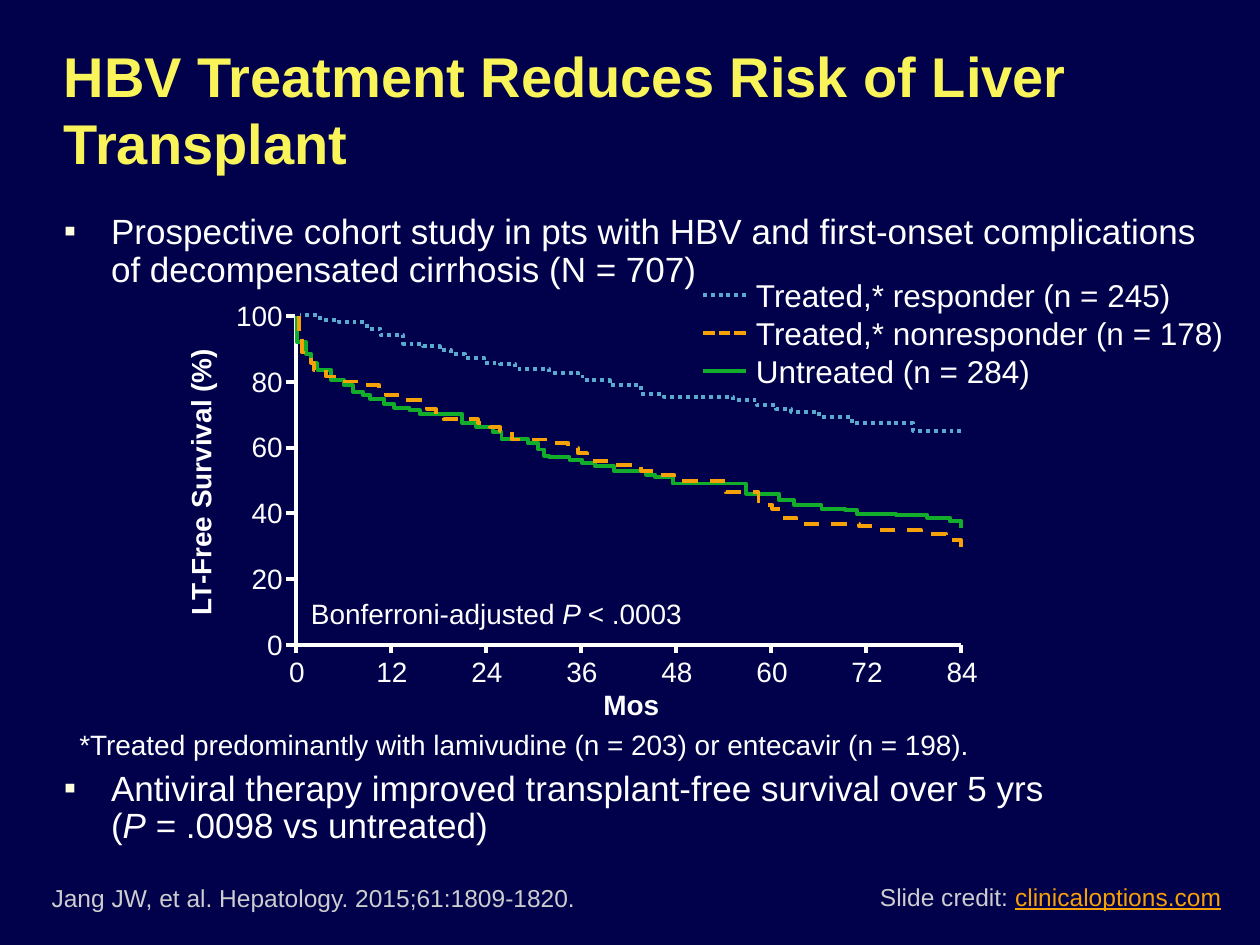
import pptx
import pptx.util
import pptx.dml.color
import pptx.enum.dml
import pptx.enum.shapes
import pptx.enum.text
import pptx.oxml
import pptx.oxml.ns

Cm, Pt = pptx.util.Cm, pptx.util.Pt
ALIGN = pptx.enum.text.PP_ALIGN
ANCHOR = pptx.enum.text.MSO_ANCHOR
DASH = pptx.enum.dml.MSO_LINE

HUES = {
    "back": "00004B", "title": "F8F45A", "text": "FFFFFF", "mark": "FEFDDE",
    "foot": "CDCDCF", "blue": "5AAACE", "gold": "F6A108", "green": "12AD2B",
}

# Survival curves as (level, held until) on a grid of 528 by 261, from the top left
GRID = 528, 261
BLUE = [
    (-1, 19), (3, 34), (5, 56), (10, 67), (15, 85), (22, 101), (24, 114),
    (27, 123), (30, 134), (33, 149), (37, 162), (38, 174), (42, 201), (45, 224),
    (48, 229), (51, 249), (55, 274), (62, 292), (64, 347), (67, 366), (71, 381),
    (74, 393), (76, 415), (80, 441), (85, 490), (91, 528),
]
GOLD = [
    (10, 2), (13, 5), (29, 12), (37, 14), (43, 24), (48, 36), (52, 52), (55, 66),
    (60, 71), (63, 86), (67, 104), (74, 111), (78, 117), (82, 144), (85, 154),
    (88, 162), (91, 171), (98, 204), (101, 216), (105, 224), (109, 231),
    (115, 249), (118, 274), (123, 284), (126, 300), (131, 341), (140, 367),
    (150, 378), (153, 385), (160, 397), (165, 447), (167, 463), (170, 496),
    (173, 516), (178, 528), (183, 528),
]
GREEN = [
    (21, 8), (30, 12), (37, 17), (43, 28), (51, 38), (55, 45), (60, 53), (63, 59),
    (66, 70), (70, 78), (73, 90), (75, 98), (78, 132), (85, 143), (88, 156),
    (92, 163), (98, 184), (101, 192), (106, 197), (111, 201), (112, 217),
    (114, 227), (117, 237), (119, 252), (123, 278), (126, 285), (128, 299),
    (133, 357), (141, 383), (146, 395), (150, 417), (153, 436), (154, 445),
    (157, 476), (158, 501), (160, 519), (163, 528), (168, 528),
]


def rgb(hue):
    return pptx.dml.color.RGBColor.from_string(HUES[hue])


def text(slide, box, paras, size=16, hue="text", bold=False, align=ALIGN.LEFT,
         anchor=ANCHOR.TOP, turn=0, bullet=False, gap=0):
    """Each paragraph is a string or a list of (words, run format) pairs."""
    shape = slide.shapes.add_textbox(*map(Cm, box))
    shape.rotation = turn
    frame = shape.text_frame
    frame.word_wrap = True
    frame.vertical_anchor = anchor
    for i, runs in enumerate([paras] if isinstance(paras, str) else paras):
        para = frame.add_paragraph() if i else frame.paragraphs[0]
        para.alignment = align
        if bullet:
            mark(para)
            para.line_spacing = 0.9
            para.space_after = Pt(7)
        if i and gap:
            para.space_before = Pt(gap)
        for words, form in [(runs, {})] if isinstance(runs, str) else runs:
            if form.get("line"):
                para.add_line_break()
            run = para.add_run()
            run.text = words
            font = run.font
            font.name, font.size, font.bold = "Arial", Pt(size), bold
            font.italic = form.get("italic", False)
            font.underline = form.get("under", False)
            font.color.rgb = rgb(form.get("hue", hue))


def mark(para):
    """Give a paragraph a square bullet and a hanging indent."""
    props = para._p.get_or_add_pPr()
    props.set("marL", str(Cm(0.95)))
    props.set("indent", str(-Cm(0.95)))
    space = pptx.oxml.ns.nsdecls("a")
    for xml in (f'<a:buClr {space}><a:srgbClr val="{HUES["mark"]}"/></a:buClr>',
                f'<a:buFont {space} typeface="Arial"/>',
                f'<a:buChar {space} char="▪"/>'):
        props.append(pptx.oxml.parse_xml(xml))


def stroke(shape, hue, dash):
    shape.line.color.rgb = rgb(hue)
    shape.line.width = Pt(2.25)
    if dash:
        shape.line.dash_style = dash


def rule(slide, x1, y1, x2, y2, hue="text", dash=None):
    kind = pptx.enum.shapes.MSO_CONNECTOR.STRAIGHT
    line = slide.shapes.add_connector(kind, Cm(x1), Cm(y1), Cm(x2), Cm(y2))
    stroke(line, hue, dash)
    line._element.spPr.append(
        pptx.oxml.parse_xml(f"<a:effectLst {pptx.oxml.ns.nsdecls('a')}/>"))


def curve(slide, box, start, steps, hue, dash=None):
    """Draw a step curve, from its right end to its left."""
    left, top, width, height = box
    points = [start]
    for level, until in steps:
        points += [(points[-1][0], level), (until, level)]
    spots = [(Cm(left + x * width / GRID[0]), Cm(top + y * height / GRID[1]))
             for x, y in reversed(points)]
    form = slide.shapes.build_freeform(*spots[0])
    form.add_line_segments(spots[1:], close=False)
    shape = form.convert_to_shape()
    shape.fill.background()
    shape.shadow.inherit = False
    stroke(shape, hue, dash)


def axes(slide, box):
    left, top, width, height = box
    base = top + height
    rule(slide, left, base, left + width, base)
    rule(slide, left, base, left, top)
    # Survival ticks
    for value in range(0, 101, 20):
        y = base - height * value / 100
        rule(slide, left - 0.03, y, left - 0.2, y)
        text(slide, (left - 1.8, y - 0.48, 1.78, 0.94), str(value),
             align=ALIGN.RIGHT)
    # Month ticks
    for month in range(0, 85, 12):
        x = left + width * month / 84
        rule(slide, x, base, x, base + 0.17)
        text(slide, (x - 0.95, base + 0.08, 1.93, 0.94), str(month),
             align=ALIGN.CENTER)
    # Axis titles
    text(slide, (left - 5.28, top + 2.88, 6.71, 0.94), "LT-Free Survival (%)",
         bold=True, align=ALIGN.CENTER, turn=270)
    text(slide, (left + 0.05, base + 0.74, width, 0.94), "Mos", bold=True,
         align=ALIGN.CENTER)


def plot(slide, box):
    left, top, width, height = box
    axes(slide, box)
    curve(slide, box, (1, 0), GREEN, "green")
    curve(slide, box, (3, -1), BLUE, "blue", DASH.ROUND_DOT)
    curve(slide, box, (2, 0), GOLD, "gold", DASH.DASH)
    text(slide, (left + 0.05, top + height - 1.09, 12.09, 0.94),
         [[("Bonferroni-adjusted ", {}), ("P ", {"italic": True}), ("< .0003", {})]])


def legend(slide, box):
    left, top, width, height = box
    items = [("Treated,* responder (n = 245)", "blue", DASH.ROUND_DOT),
             ("Treated,* nonresponder (n = 178)", "gold", DASH.SQUARE_DOT),
             ("Untreated (n = 284)", "green", None)]
    for i, (_, hue, dash) in enumerate(items):
        y = top + 0.5 + 0.77 * i
        rule(slide, left, y, left + 0.87, y, hue, dash)
    text(slide, (left + 0.82, top, width - 0.82, height),
         [item[0] for item in items], size=18)


def points(slide, box):
    text(slide, box, [
        "Prospective cohort study in pts with HBV and first-onset complications "
        "of decompensated cirrhosis (N = 707)",
        [("Antiviral therapy improved transplant-free survival over 5 yrs", {}),
         ("(", {"line": True}), ("P", {"italic": True}),
         (" = .0098 vs untreated)", {})],
    ], size=20, bullet=True, gap=268)


def footer(slide, box):
    left, top, width, height = box
    text(slide, (left, top, 16.36, height),
         "Jang JW, et al. Hepatology. 2015;61:1809-1820.",
         size=14, hue="foot", anchor=ANCHOR.BOTTOM)
    text(slide, (left + width - 7.6, top, 7.6, height),
         [[("Slide credit: ", {}),
           ("clinicaloptions.com", {"hue": "gold", "under": True})]],
         size=14, hue="foot", align=ALIGN.RIGHT)


def main():
    deck = pptx.Presentation()
    deck.slide_width, deck.slide_height = Cm(25.4), Cm(19.05)
    slide = deck.slides.add_slide(deck.slide_layouts[6])
    slide.background.fill.solid()
    slide.background.fill.fore_color.rgb = rgb("back")

    text(slide, (1.04, 0.66, 23.44, 3.07),
         "HBV Treatment Reduces Risk of Liver Transplant",
         size=32, hue="title", bold=True, anchor=ANCHOR.MIDDLE)
    points(slide, (1.04, 4.19, 23.47, 13))
    legend(slide, (14.17, 5.44, 10.93, 2.57))
    plot(slide, (5.97, 6.37, 13.41, 6.63))
    text(slide, (1.35, 14.55, 23.22, 0.94),
         "*Treated predominantly with lamivudine (n = 203) or entecavir (n = 198).")
    footer(slide, (0.79, 17.65, 24.08, 0.86))
    deck.save("out.pptx")


if __name__ == "__main__":
    main()
